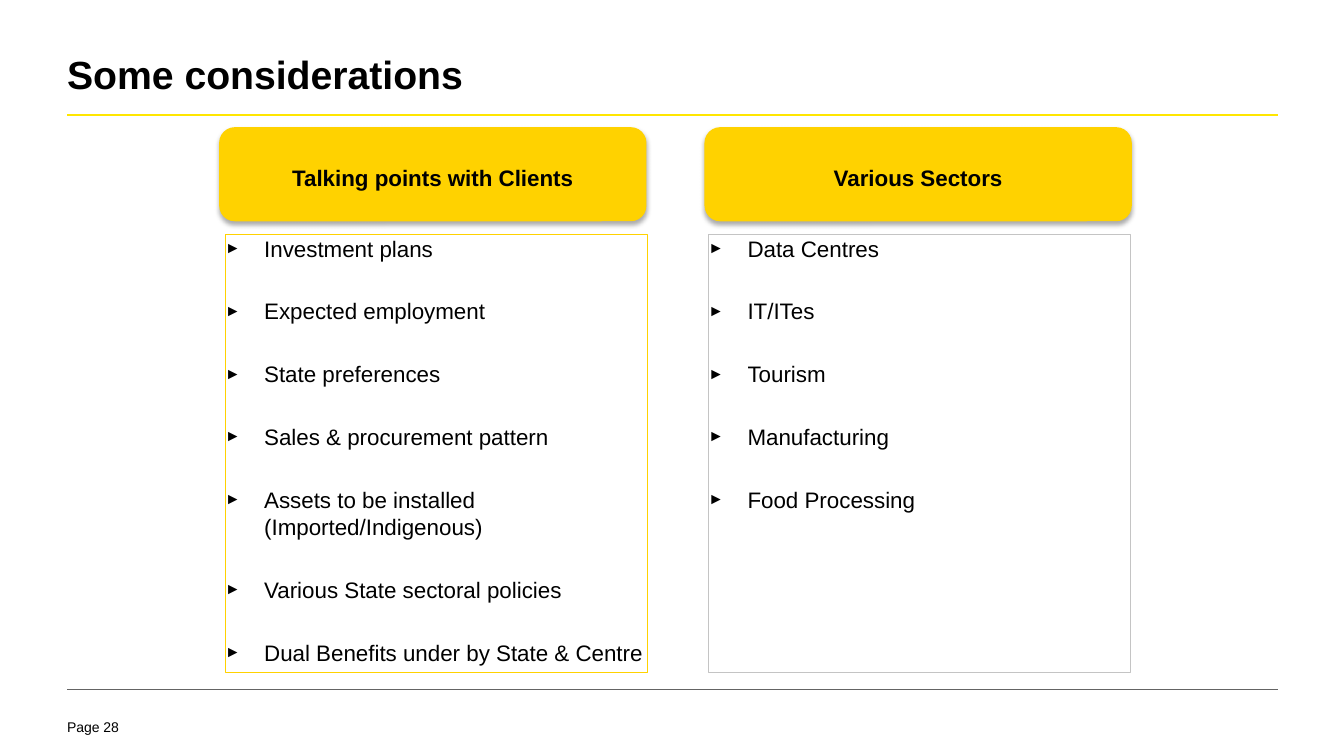
from lxml.etree import SubElement
from pptx import Presentation
from pptx.dml.color import RGBColor
from pptx.enum.shapes import MSO_CONNECTOR as Connector, MSO_SHAPE as Shape
from pptx.enum.text import MSO_ANCHOR as Anchor, PP_ALIGN as Align
from pptx.oxml.ns import qn
from pptx.util import Pt

PX = 9080
BLACK = RGBColor(0x00, 0x00, 0x00)
YELLOW = RGBColor(0xFF, 0xD2, 0x00)
RULE_YELLOW = RGBColor(0xFF, 0xE6, 0x00)
RULE_GRAY = RGBColor(0x64, 0x64, 0x64)
BOX_GRAY = RGBColor(0xC4, 0xC4, 0xC4)

TALKING_POINTS = [
    "Investment plans",
    "Expected employment",
    "State preferences",
    "Sales & procurement pattern",
    "Assets to be installed (Imported/Indigenous)",
    "Various State sectoral policies",
    "Dual Benefits under by State & Centre",
]
SECTORS = ["Data Centres", "IT/ITes", "Tourism", "Manufacturing", "Food Processing"]


def px(*lengths):
    return [length * PX for length in lengths]


def style_font(paragraph, size, bold=False):
    for run in paragraph.runs:
        run.font.name = "Arial"
        run.font.size = Pt(size)
        run.font.bold = bold
        run.font.color.rgb = BLACK


def prepare_frame(shape, anchor, top_inset=0):
    frame = shape.text_frame
    frame.word_wrap = True
    frame.vertical_anchor = anchor
    frame.margin_left = frame.margin_right = frame.margin_bottom = 0
    frame.margin_top = top_inset * PX
    return frame


def add_label(slide, box, text, size, anchor, bold=False):
    frame = prepare_frame(slide.shapes.add_textbox(*px(*box)), anchor)
    frame.text = text
    style_font(frame.paragraphs[0], size, bold)


def add_rule(slide, y, color, width):
    line = slide.shapes.add_connector(Connector.STRAIGHT, *px(67, y, 1277, y))
    line.line.color.rgb = color
    line.line.width = Pt(width)
    SubElement(line._element.spPr, qn("a:effectLst"))


def add_soft_shadow(shape):
    shape.shadow.inherit = False
    effects = shape._element.spPr.find(qn("a:effectLst"))
    shadow = SubElement(effects, qn("a:outerShdw"), blurRad=str(Pt(3.5)),
                        dist=str(Pt(2.2)), dir="5400000", rotWithShape="0")
    color = SubElement(shadow, qn("a:srgbClr"), val="000000")
    SubElement(color, qn("a:alpha"), val="32000")


def add_header(slide, left, text):
    header = slide.shapes.add_shape(Shape.ROUNDED_RECTANGLE, *px(left, 127, 427, 94))
    header.fill.solid()
    header.fill.fore_color.rgb = YELLOW
    header.line.fill.background()
    add_soft_shadow(header)
    frame = prepare_frame(header, Anchor.MIDDLE, top_inset=7)
    frame.text = text
    frame.paragraphs[0].alignment = Align.CENTER
    style_font(frame.paragraphs[0], 16, bold=True)


def add_bullet(paragraph):
    properties = paragraph._p.get_or_add_pPr()
    properties.set("marL", str(39 * PX))
    properties.set("indent", str(-39 * PX))
    SubElement(properties, qn("a:buSzPct"), val="70000")
    SubElement(properties, qn("a:buFont"), typeface="Arial")
    SubElement(properties, qn("a:buChar"), char="►")


def add_bullet_box(slide, left, items, line_color):
    box = slide.shapes.add_shape(Shape.RECTANGLE, *px(left, 234, 422, 438))
    box.shadow.inherit = False
    box.fill.background()
    box.line.color.rgb = line_color
    box.line.width = Pt(0.75)
    frame = prepare_frame(box, Anchor.TOP)
    frame.text = "\n".join(items)
    for index, paragraph in enumerate(frame.paragraphs):
        add_bullet(paragraph)
        paragraph.alignment = Align.LEFT
        paragraph.line_spacing = Pt(19.5)
        paragraph.space_before = Pt(25.3 if index else 0)
        style_font(paragraph, 16)


def main():
    presentation = Presentation()
    presentation.slide_width, presentation.slide_height = px(1343, 755)
    slide = presentation.slides.add_slide(presentation.slide_layouts[6])
    add_label(slide, (67, 715, 106, 22), "Page 28", 10, Anchor.MIDDLE)
    add_rule(slide, 115, RULE_YELLOW, 1.5)
    add_rule(slide, 688, RULE_GRAY, 0.25)
    add_label(slide, (67, 50, 1210, 60), "Some considerations", 28, Anchor.TOP, bold=True)
    add_bullet_box(slide, 225, TALKING_POINTS, YELLOW)
    add_header(slide, 219, "Talking points with Clients")
    add_bullet_box(slide, 708, SECTORS, BOX_GRAY)
    add_header(slide, 704, "Various Sectors")
    presentation.save("out.pptx")


if __name__ == "__main__":
    main()
